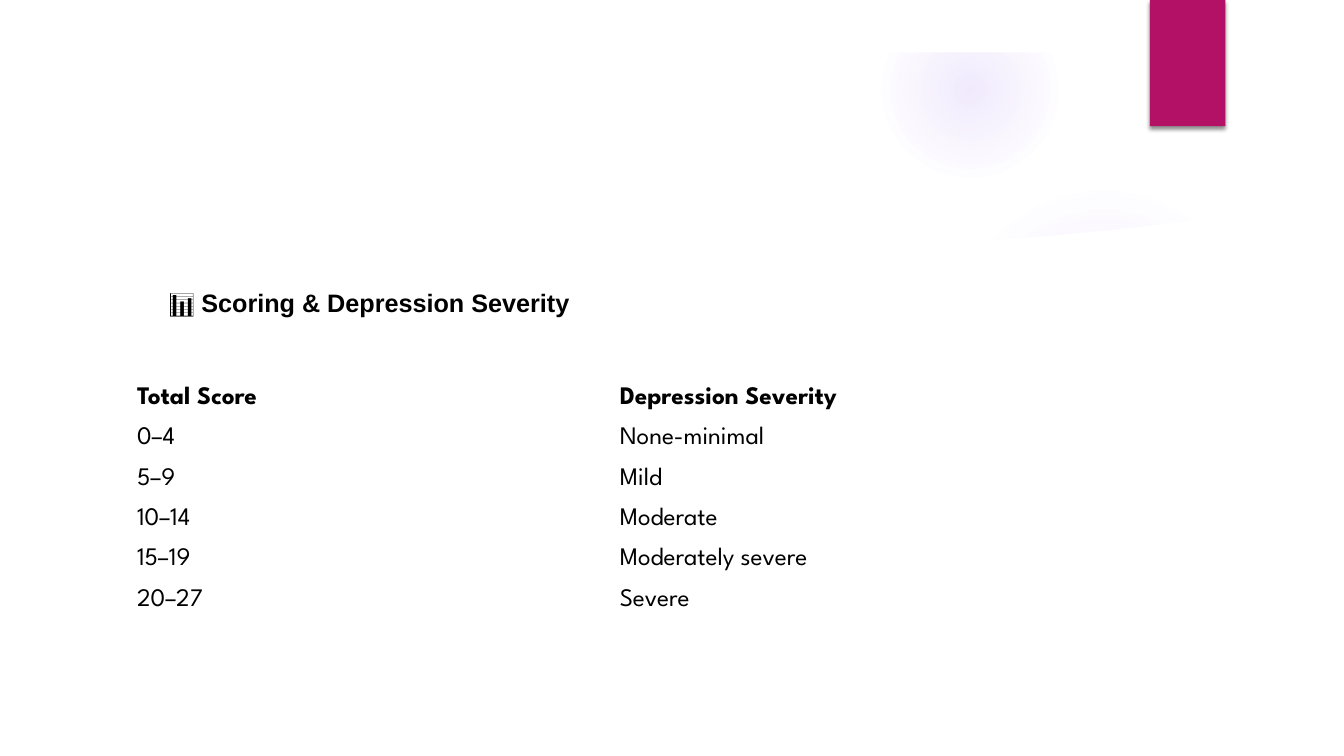
import pptx
import pptx.util
import pptx.oxml
import pptx.oxml.ns
import pptx.dml.color
import pptx.enum.shapes
import pptx.enum.text

Cm = pptx.util.Cm
Pt = pptx.util.Pt
KIND = pptx.enum.shapes.MSO_SHAPE
NS = pptx.oxml.ns.nsdecls("a")
WIDE, HIGH = 33.87, 19.05

HUES = {"white": "FFFFFF", "black": "000000", "glow": "9B6BF2", "tab": "B31166"}

ROWS = [
    ("Total Score", "Depression Severity"),
    ("0–4", "None-minimal"),
    ("5–9", "Mild"),
    ("10–14", "Moderate"),
    ("15–19", "Moderately severe"),
    ("20–27", "Severe"),
]

# Upper edge of the white panel, right to left
WAVE = [(32.6, 5.18), (30.48, 5.51), (28.3, 5.77), (26.2, 5.97), (24.1, 6.12),
        (21.34, 6.25), (18, 6.3), (15.4, 6.27), (12.4, 6.17), (9.1, 5.99),
        (5.5, 5.69), (2.4, 5.33), (1.27, 5.18)]


def hue(name):
    return pptx.dml.color.RGBColor.from_string(HUES[name])


def style(para, face, bold):
    look = {"name": face, "size": Pt(18), "bold": bold}
    for key, value in look.items():
        setattr(para.font, key, value)
    para.font.color.rgb = hue("black")


def paint(shape, name):
    shape.shadow.inherit = False
    shape.fill.solid()
    shape.fill.fore_color.rgb = hue(name)
    shape.line.fill.background()


def add_glow(slide, box, stops):
    """Round glow that fades out; stops are (position %, opacity %)."""
    glow = slide.shapes.add_shape(KIND.OVAL, *map(Cm, box))
    paint(glow, "glow")
    marks = "".join(
        f'<a:gs pos="{pos * 1000}"><a:srgbClr val="{HUES["glow"]}">'
        f'<a:alpha val="{alpha * 1000}"/></a:srgbClr></a:gs>'
        for pos, alpha in stops)
    fade = pptx.oxml.parse_xml(
        f'<a:gradFill {NS} rotWithShape="1"><a:gsLst>{marks}</a:gsLst><a:path path="circle">'
        '<a:fillToRect l="50000" t="50000" r="50000" b="50000"/></a:path></a:gradFill>')
    props = glow.element.spPr
    props.replace(props.find(pptx.oxml.ns.qn("a:solidFill")), fade)


def add_panel(slide, box):
    """White frame and wavy panel laid over the glows."""
    left, top, width, height = box
    edge = 1.32
    foot = top + height - edge
    pen = slide.shapes.build_freeform(Cm(left + 1.27), Cm(foot), scale=1.0)
    points = [(left + width - 1.27, foot)] + [(left + x, top + y) for x, y in WAVE]
    pen.add_line_segments([(Cm(x), Cm(y)) for x, y in points], close=True)
    paint(pen.convert_to_shape(), "white")
    frame = slide.shapes.add_shape(KIND.FRAME, *map(Cm, box))
    frame.adjustments[0] = edge / height
    paint(frame, "white")


def add_tab(slide, box):
    tab = slide.shapes.add_shape(KIND.RECTANGLE, *map(Cm, box))
    paint(tab, "tab")
    shade = pptx.oxml.parse_xml(
        f'<a:outerShdw {NS} blurRad="{Pt(3)}" dist="{Pt(2)}" dir="5400000" rotWithShape="0">'
        f'<a:srgbClr val="{HUES["black"]}"><a:alpha val="45000"/></a:srgbClr></a:outerShdw>')
    tab.element.spPr.find(pptx.oxml.ns.qn("a:effectLst")).append(shade)


def add_scores(slide, box):
    table = slide.shapes.add_table(len(ROWS), 2, *map(Cm, box)).table
    table.first_row = table.horz_banding = False
    for row, words in enumerate(ROWS):
        for col, word in enumerate(words):
            cell = table.cell(row, col)
            cell.fill.background()
            cell.vertical_anchor = pptx.enum.text.MSO_ANCHOR.MIDDLE
            cell.text = word
            style(cell.text_frame.paragraphs[0], "League Spartan", row == 0)


def add_title(slide, box):
    frame = slide.shapes.add_textbox(*map(Cm, box)).text_frame
    frame.word_wrap = True
    frame.auto_size = pptx.enum.text.MSO_AUTO_SIZE.SHAPE_TO_FIT_TEXT
    frame.text = "📊 Scoring & Depression Severity"
    style(frame.paragraphs[0], "Arial", True)


def main():
    deck = pptx.Presentation()
    deck.slide_width, deck.slide_height = Cm(WIDE), Cm(HIGH)
    slide = deck.slides.add_slide(deck.slide_layouts[6])

    # Backdrop
    add_glow(slide, (23.9, 4.65, 7.82, 7.82), [(0, 7), (36, 6), (69, 0)])
    add_glow(slide, (22.22, 0.03, 4.45, 4.45), [(0, 14), (36, 7), (73, 0)])
    add_panel(slide, (0, 0, WIDE, HIGH))
    add_tab(slide, (28.98, 0, 1.9, 3.18))

    # Content
    add_scores(slide, (3.2, 9.53, 24.33, 6.1))
    add_title(slide, (4.01, 7.11, 16.94, 1.02))
    deck.save("out.pptx")


if __name__ == "__main__":
    main()
